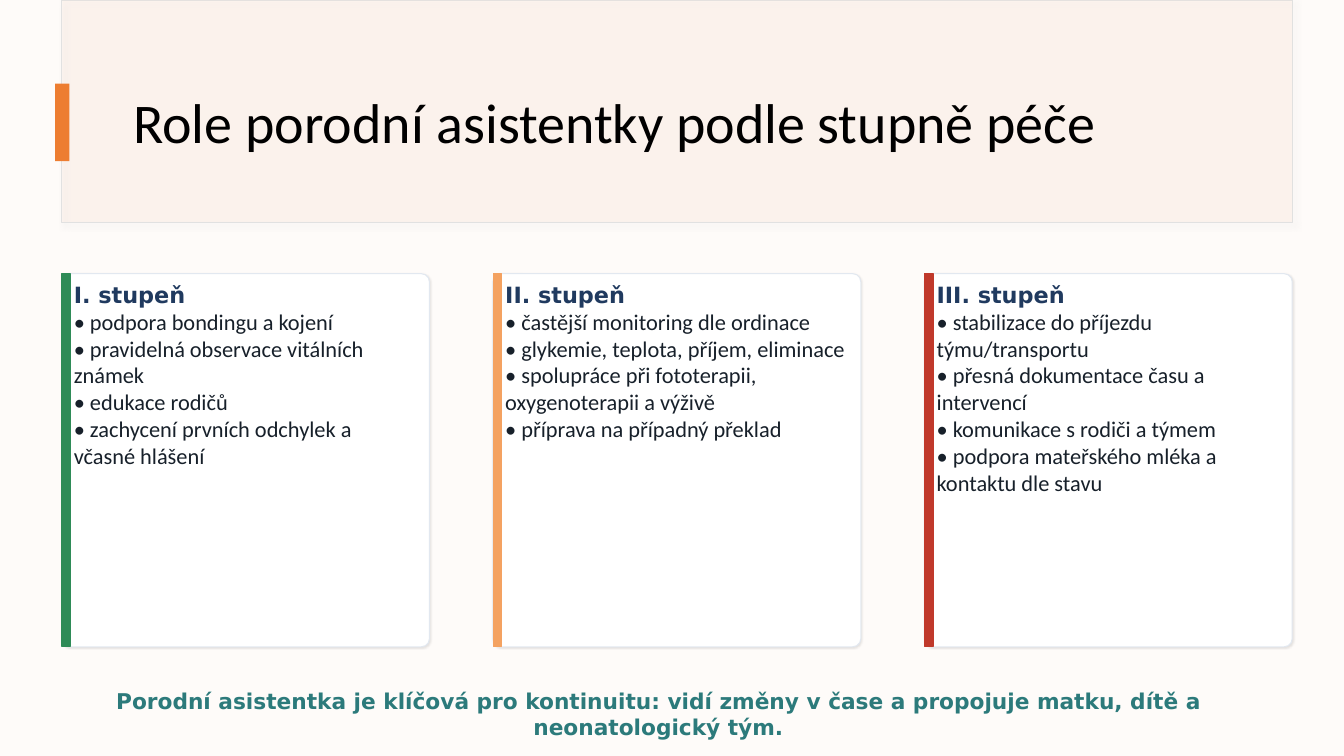
from lxml import etree
from pptx import Presentation
from pptx.dml.color import RGBColor
from pptx.enum.shapes import MSO_SHAPE
from pptx.enum.text import MSO_ANCHOR, PP_ALIGN
from pptx.oxml.ns import qn
from pptx.util import Pt

RECTANGLE = MSO_SHAPE.RECTANGLE
ROUNDED = MSO_SHAPE.ROUNDED_RECTANGLE
TOP, MIDDLE = MSO_ANCHOR.TOP, MSO_ANCHOR.MIDDLE
LEFT, CENTER = PP_ALIGN.LEFT, PP_ALIGN.CENTER
TITLE_ONLY = 5
BODY_FONT, HEADING_FONT = "Calibri", "DejaVu Sans"
PEACH = "FBE5D6"

LEVELS = [
    ("I. stupeň", "2E8B57", [
        "podpora bondingu a kojení",
        "pravidelná observace vitálních známek",
        "edukace rodičů",
        "zachycení prvních odchylek a včasné hlášení"]),
    ("II. stupeň", "F4A261", [
        "častější monitoring dle ordinace",
        "glykemie, teplota, příjem, eliminace",
        "spolupráce při fototerapii, oxygenoterapii a výživě",
        "příprava na případný překlad"]),
    ("III. stupeň", "C0392B", [
        "stabilizace do příjezdu týmu/transportu",
        "přesná dokumentace času a intervencí",
        "komunikace s rodiči a týmem",
        "podpora mateřského mléka a kontaktu dle stavu"]),
]


def color(value):
    """Return the colour for a hex string."""
    return RGBColor.from_string(value)


def add_alpha(color_element, percent):
    """Set the opacity of a colour element."""
    etree.SubElement(color_element, qn("a:alpha"), val=str(percent * 1000))


def add_shadow(shape, value, opacity, blur, distance):
    """Give a shape a soft shadow towards the lower right."""
    effects = shape._element.spPr.find(qn("a:effectLst"))
    shadow = etree.SubElement(
        effects, qn("a:outerShdw"), blurRad=str(Pt(blur)), dist=str(Pt(distance)),
        dir=str(45 * 60000), algn="tl", rotWithShape="0")
    add_alpha(etree.SubElement(shadow, qn("a:srgbClr"), val=value), opacity)


def add_box(slide, box, fill, kind=RECTANGLE, line=None, line_width=0.75, opacity=None):
    """Add a filled shape at left, top, width and height in points."""
    shape = slide.shapes.add_shape(kind, *map(Pt, box))
    shape.shadow.inherit = False
    shape.fill.solid()
    shape.fill.fore_color.rgb = color(fill)
    if opacity is not None:
        add_alpha(shape._element.spPr.find(qn("a:solidFill"))[0], opacity)
    if line:
        shape.line.color.rgb = color(line)
        shape.line.width = Pt(line_width)
    else:
        shape.line.fill.background()
    return shape


def write(paragraph, text, size=16, font=BODY_FONT, ink="17202A", bold=False, align=LEFT):
    """Write formatted text into a paragraph."""
    paragraph.alignment = align
    run = paragraph.add_run()
    run.text = text
    run.font.size = Pt(size)
    run.font.name = font
    run.font.bold = bold
    run.font.color.rgb = color(ink)


def add_header(slide, box, title_text):
    """Draw the banner with its accent and title."""
    left, top, width, height = box
    banner = add_box(slide, box, PEACH, line="E1E1E1", opacity=15)
    add_shadow(banner, "D9D9D9", 50, 4, 3)
    add_box(slide, (left + 0.5, top, width - 0.5, height - 0.5), PEACH, opacity=15)

    title = slide.shapes.title
    slide.shapes.element.append(title.element)
    title.left, title.top = Pt(left + 44), Pt(top + 43.2)
    title.width, title.height = Pt(width - 78.5), Pt(92.9)
    frame = title.text_frame
    frame.word_wrap = True
    frame.vertical_anchor = MIDDLE
    frame.paragraphs[0].line_spacing = 0.9
    write(frame.paragraphs[0], title_text, size=40, ink="000000")

    add_box(slide, (left - 4.5, top + 59.8, 10.1, 55.4), "ED7D31")


def add_card(slide, box, heading, accent, duties):
    """Draw one care level card with its coloured edge."""
    left, top, width, height = box
    card = add_box(slide, box, "FFFFFF", ROUNDED, line="E2E8F0")
    card.adjustments[0] = 0.022
    add_shadow(card, "000000", 10, 1.5, 0.5)
    frame = card.text_frame
    frame.word_wrap = True
    frame.vertical_anchor = TOP
    write(frame.paragraphs[0], heading, font=HEADING_FONT, ink="203A5F", bold=True)
    for duty in duties:
        write(frame.add_paragraph(), f"• {duty}")
    add_box(slide, (left + 0.3, top, 5.8, height), accent, line=accent, line_width=1)


def add_cards(slide, box, levels, gap):
    """Place the cards in equal columns across a box."""
    left, top, width, height = box
    card_width = (width - gap * (len(levels) - 1)) / len(levels)
    for index, level in enumerate(levels):
        card_left = left + index * (card_width + gap)
        add_card(slide, (card_left, top, card_width, height), *level)


def add_conclusion(slide, box, text):
    """Add the centred closing statement."""
    frame = slide.shapes.add_textbox(*map(Pt, box)).text_frame
    frame.word_wrap = True
    frame.margin_left = frame.margin_right = frame.margin_top = frame.margin_bottom = 0
    write(frame.paragraphs[0], text, size=15.5, font=HEADING_FONT,
          ink="2C7A7B", bold=True, align=CENTER)


def main():
    """Build and save the presentation."""
    presentation = Presentation()
    presentation.slide_width, presentation.slide_height = Pt(960), Pt(540)
    slide = presentation.slides.add_slide(presentation.slide_layouts[TITLE_ONLY])
    slide.background.fill.solid()
    slide.background.fill.fore_color.rgb = color("FEFBF9")
    add_header(slide, (44, 0, 879, 159), "Role porodní asistentky podle stupně péče")
    add_cards(slide, (44, 195.5, 879, 266.5), LEVELS, gap=45.4)
    add_conclusion(
        slide, (67, 491, 806.4, 36),
        "Porodní asistentka je klíčová pro kontinuitu: vidí změny v čase "
        "a propojuje matku, dítě a neonatologický tým.")
    presentation.save("out.pptx")


if __name__ == "__main__":
    main()
